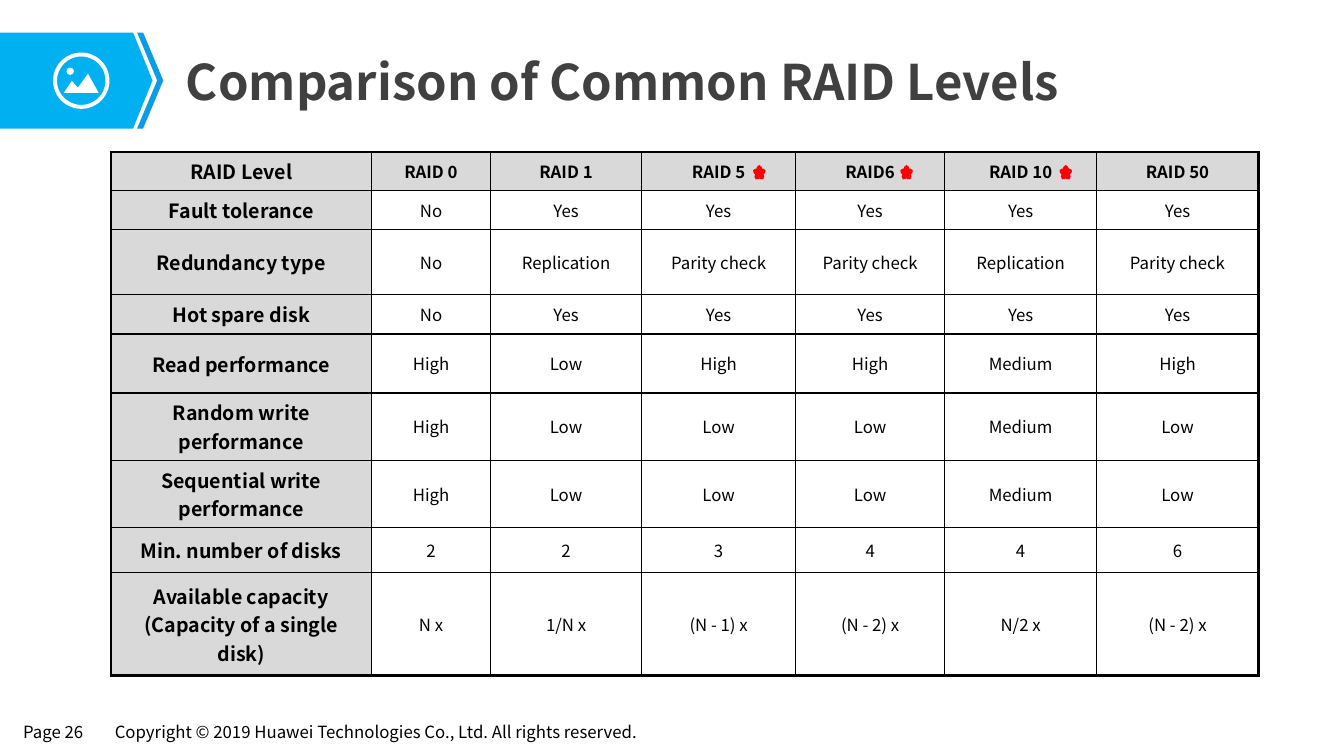
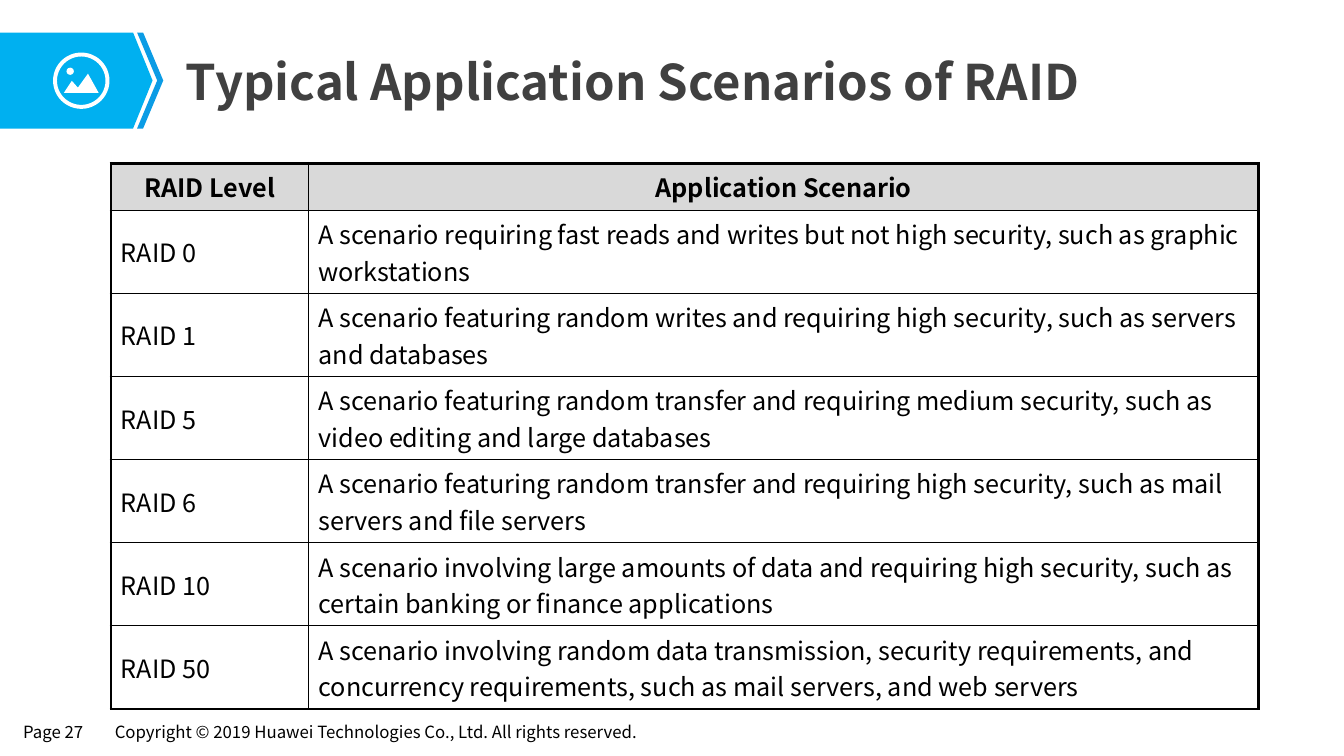
from lxml.etree import SubElement as Sub
from pptx import Presentation as Deck
from pptx.dml.color import RGBColor as Rgb
from pptx.enum.shapes import MSO_SHAPE as Form
from pptx.enum.text import MSO_ANCHOR as Anchor, PP_ALIGN as Align
from pptx.oxml.ns import qn
from pptx.util import Inches, Pt

WIDE, HIGH = Inches(13.33), Inches(7.5)
FONT = "Noto Sans CJK SC"
HUE = {
    "ink": "000000", "title": "404040", "head": "D9D9D9", "tag": "00B0F0",
    "edge": "0B9CE5", "icon": "FFFFFF", "star": "FF0000",
}
THIN, THICK = Pt(1), Pt(2.25)
LEFT = 8.25

LEVELS = [
    ["RAID Level", "RAID 0", "RAID 1", "RAID 5", "RAID6", "RAID 10", "RAID 50"],
    ["Fault tolerance", "No", "Yes", "Yes", "Yes", "Yes", "Yes"],
    ["Redundancy type", "No", "Replication", "Parity check", "Parity check",
     "Replication", "Parity check"],
    ["Hot spare disk", "No", "Yes", "Yes", "Yes", "Yes", "Yes"],
    ["Read performance", "High", "Low", "High", "High", "Medium", "High"],
    ["Random write performance", "High", "Low", "Low", "Low", "Medium", "Low"],
    ["Sequential write performance", "High", "Low", "Low", "Low", "Medium", "Low"],
    ["Min. number of disks", "2", "2", "3", "4", "4", "6"],
    ["Available capacity\n(Capacity of a single disk)", "N x", "1/N x",
     "(N - 1) x", "(N - 2) x", "N/2 x", "(N - 2) x"],
]
USES = [
    ["RAID Level", "Application Scenario"],
    ["RAID 0", "A scenario requiring fast reads and writes but not high security, "
     "such as graphic workstations"],
    ["RAID 1", "A scenario featuring random writes and requiring high security, "
     "such as servers and databases"],
    ["RAID 5", "A scenario featuring random transfer and requiring medium security, "
     "such as video editing and large databases"],
    ["RAID 6", "A scenario featuring random transfer and requiring high security, "
     "such as mail servers and file servers"],
    ["RAID 10", "A scenario involving large amounts of data and requiring high "
     "security, such as certain banking or finance applications"],
    ["RAID 50", "A scenario involving random data transmission, security "
     "requirements, and concurrency requirements, such as mail servers, and web servers"],
]


def across(share):
    return round(WIDE * share / 100)


def down(share):
    return round(HIGH * share / 100)


def box(x, y, w, h):
    return across(x), down(y), across(w), down(h)


def write(frame, text, size, hue="ink", bold=False, align=Align.LEFT):
    frame.text = text
    for para in frame.paragraphs:
        para.alignment = align
        for run in para.runs:
            font = run.font
            font.name, font.size, font.bold = FONT, Pt(size), bold
            font.color.rgb = Rgb.from_string(HUE[hue])


def label(slide, place, text, size, wrap=False, **style):
    frame = slide.shapes.add_textbox(*box(*place)).text_frame
    frame.word_wrap = wrap
    frame.vertical_anchor = Anchor.MIDDLE
    write(frame, text, size, **style)


def paint(shape, hue, line=0):
    shape.shadow.inherit = False
    shape.fill.solid()
    shape.fill.fore_color.rgb = Rgb.from_string(HUE[hue])
    if line:
        shape.line.color.rgb = Rgb.from_string(HUE[hue])
        shape.line.width = Pt(line)
    else:
        shape.line.fill.background()
    return shape


def preset(slide, form, place, hue, line=0):
    return paint(slide.shapes.add_shape(form, *box(*place)), hue, line)


def outline(slide, points, hue):
    spots = [(across(x), down(y)) for x, y in points]
    pen = slide.shapes.build_freeform(*spots[0])
    pen.add_line_segments(spots[1:], close=True)
    paint(pen.convert_to_shape(), hue)


def banner(slide):
    top, mid, base = 4.3, 10.65, 17
    outline(slide, [(0, top), (9.9, top), (11.35, mid), (9.9, base), (0, base)], "tag")
    outline(slide, [(10.2, top), (10.65, top), (12.15, mid), (10.65, base),
                    (10.2, base), (11.7, mid)], "edge")
    ring = preset(slide, Form.DONUT, (3.95, 6.95, 4.2, 7.45), "icon")
    ring.adjustments[0] = 0.07
    outline(slide, [(4.75, 12.3), (5.35, 10.7), (5.8, 11.6), (6.55, 9.75),
                    (7.35, 12.3)], "icon")
    preset(slide, Form.OVAL, (4.95, 8.95, 0.55, 0.95), "icon")


def page(deck, number, title):
    slide = deck.slides.add_slide(deck.slide_layouts[6])
    label(slide, (0.98, 94.8, 6.3, 3.9), f"Page {number}", 12)
    label(slide, (7.8, 94.8, 42.45, 3.9),
          "Copyright © 2019 Huawei Technologies Co., Ltd. All rights reserved.", 12)
    banner(slide)
    label(slide, (13.1, 6, 80.6, 9.3), title, 35, wrap=True, hue="title", bold=True)
    return slide


def border(cell, sides):
    props = cell._tc.get_or_add_tcPr()
    for side, outer in sides.items():
        line = Sub(props, qn(f"a:ln{side}"), w=str(THICK if outer else THIN))
        Sub(Sub(line, qn("a:solidFill")), qn("a:srgbClr"), val=HUE["ink"])


def grid(slide, top, cols, rows, data, style):
    place = box(LEFT, top, sum(cols), sum(rows))
    table = slide.shapes.add_table(len(rows), len(cols), *place).table
    table.horz_banding = False
    for col, share in zip(table.columns, cols):
        col.width = across(share)
    for row, share in zip(table.rows, rows):
        row.height = down(share)
    for r, texts in enumerate(data):
        for c, text in enumerate(texts):
            cell = table.cell(r, c)
            border(cell, {"L": c == 0, "R": c == len(cols) - 1,
                          "T": r == 0, "B": r == len(rows) - 1})
            size, head, align = style(r, c)
            cell.vertical_anchor = Anchor.MIDDLE
            if head:
                cell.fill.solid()
                cell.fill.fore_color.rgb = Rgb.from_string(HUE["head"])
            else:
                cell.fill.background()
            write(cell.text_frame, text, size, bold=head, align=align)


def level(r, c):
    return 12 if c else 14, r == 0 or c == 0, Align.CENTER


def usage(r, c):
    return 18, r == 0, Align.LEFT if r else Align.CENTER


def main():
    deck = Deck()
    deck.slide_width, deck.slide_height = WIDE, HIGH

    slide = page(deck, 26, "Comparison of Common RAID Levels")
    grid(slide, 20.1, [19.4, 8.85, 11.25, 11.45, 11.1, 11.3, 12.05],
         [5.1, 5.2, 8.6, 5.2, 7.8, 8.9, 8.9, 6, 13.6], LEVELS, level)
    for x in (56.2, 67.15, 79):
        preset(slide, Form.STAR_5_POINT, (x, 22.15, 0.6, 1.3), "star", 3.5)

    slide = page(deck, 27, "Typical Application Scenarios of RAID")
    grid(slide, 21.6, [14.7, 70.7], [6.2] + [11] * 6, USES, usage)

    deck.save("out.pptx")


if __name__ == "__main__":
    main()
